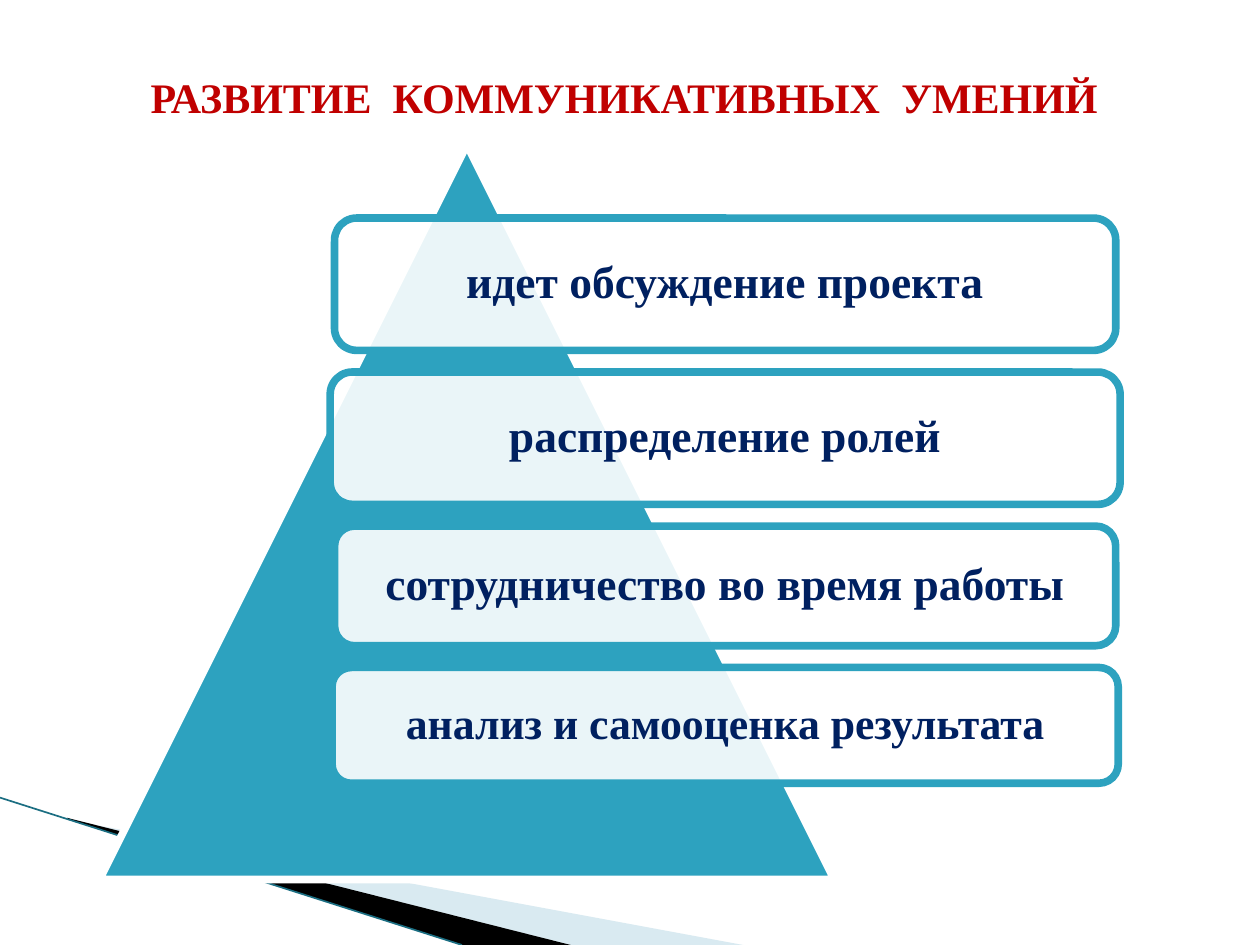
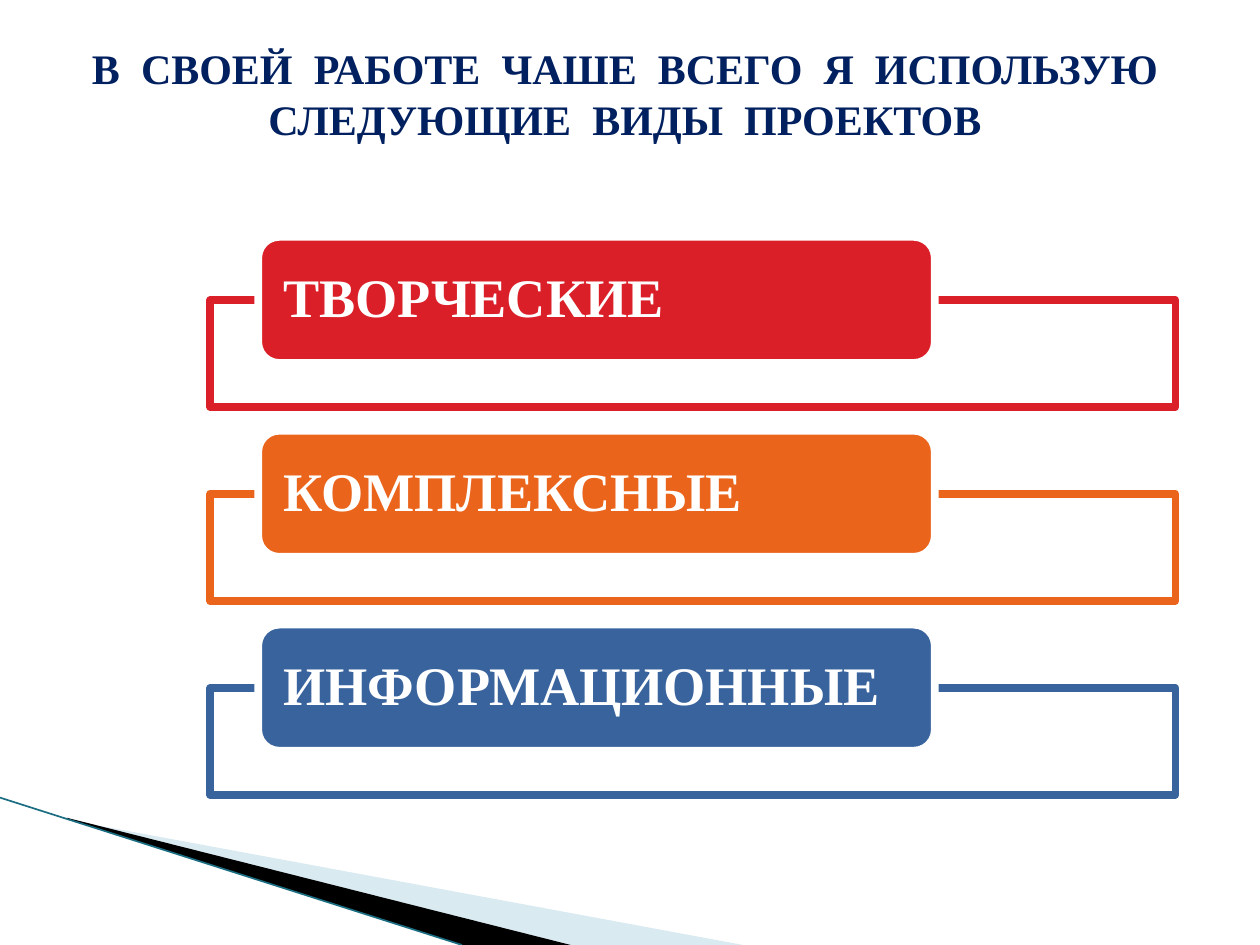
from dataclasses import dataclass

import pptx
import pptx.dml.color
import pptx.enum.shapes
import pptx.enum.text
import pptx.oxml
import pptx.oxml.ns
import pptx.util

Pt = pptx.util.Pt
RGB = pptx.dml.color.RGBColor
SHAPE = pptx.enum.shapes.MSO_SHAPE
ALIGN = pptx.enum.text.PP_ALIGN
ANCHOR = pptx.enum.text.MSO_ANCHOR

# Shared colours and formats
WHITE = RGB(0xFF, 0xFF, 0xFF)
BLACK = RGB(0x00, 0x00, 0x00)
NAVY = RGB(0x00, 0x20, 0x60)
CRIMSON = RGB(0xC0, 0x00, 0x00)
TEAL = RGB(0x2D, 0xA2, 0xBF)
DARK_TEAL = RGB(0x1B, 0x6E, 0x82)
PALE_BLUE = RGB(0xA0, 0xCB, 0xDC)
RED = RGB(0xDA, 0x1F, 0x28)
ORANGE = RGB(0xEB, 0x64, 0x1B)
BLUE = RGB(0x39, 0x63, 0x9D)

FONT = {"name": "Times New Roman", "bold": True}
BORDER = 4.33
TITLE_SIZE = 24
TITLE_WORD_GAP = 6  # extra points between title words


@dataclass
class Box:
    left: float
    top: float
    width: float
    height: float

    def lengths(self) -> list:
        return [Pt(v) for v in (self.left, self.top, self.width, self.height)]


@dataclass
class Wedge:
    points: list
    color: RGB
    opacity: int


@dataclass
class Skill:
    text: str
    width: float
    height: float
    size: int


@dataclass
class Project:
    text: str
    color: RGB


WEDGES = [
    Wedge([(39.6, 468.7), (424.6, 540), (326, 540), (39.6, 468)], PALE_BLUE, 40),
    Wedge([(38.2, 467.3), (326.2, 540), (264, 540), (38.9, 468)], BLACK, 100),
]
SKILLS = [
    Skill("идет обсуждение проекта", 446.4, 75.6, 26),
    Skill("распределение ролей", 451.4, 75.6, 26),
    Skill("сотрудничество во время работы", 446.4, 68.4, 26),
    Skill("анализ и самооценка результата", 449.3, 66.2, 25),
]
PROJECTS = [
    Project("ТВОРЧЕСКИЕ", RED),
    Project("КОМПЛЕКСНЫЕ", ORANGE),
    Project("ИНФОРМАЦИОННЫЕ", BLUE),
]


def apply(obj, values: dict) -> None:
    for name, value in values.items():
        setattr(obj, name, value)


def set_fill(sp, color: RGB, opacity: int = 100) -> None:
    sp.shadow.inherit = False
    sp.fill.solid()
    sp.fill.fore_color.rgb = color
    if opacity < 100:
        clr = sp._element.spPr.find(".//" + pptx.oxml.ns.qn("a:srgbClr"))
        alpha = pptx.oxml.parse_xml(
            f'<a:alpha {pptx.oxml.ns.nsdecls("a")} val="{opacity * 1000}"/>')
        clr.append(alpha)


def add_panel(s, kind, box: Box, fill: RGB, line: RGB, opacity: int = 100):
    sp = s.shapes.add_shape(kind, *box.lengths())
    set_fill(sp, fill, opacity)
    sp.line.color.rgb = line
    sp.line.width = Pt(BORDER)
    return sp


def set_font(r, size: float, color: RGB) -> None:
    apply(r.font, {**FONT, "size": Pt(size)})
    r.font.color.rgb = color


def set_label(sp, text: str, size: int, color: RGB, align, inset: float) -> None:
    tf = sp.text_frame
    apply(tf, {"word_wrap": True, "vertical_anchor": ANCHOR.MIDDLE,
               "margin_left": Pt(inset), "margin_right": Pt(inset),
               "margin_top": 0, "margin_bottom": 0})
    p = tf.paragraphs[0]
    apply(p, {"alignment": align, "line_spacing": 0.9})
    r = p.add_run()
    r.text = text
    set_font(r, size, color)


def add_title(s, text: str, box: Box, color: RGB) -> None:
    sp = s.shapes.title
    apply(sp, dict(zip(("left", "top", "width", "height"), box.lengths())))
    tf = sp.text_frame
    apply(tf, {"word_wrap": True, "vertical_anchor": ANCHOR.TOP,
               "auto_size": pptx.enum.text.MSO_AUTO_SIZE.NONE})
    p = tf.paragraphs[0]
    p.alignment = ALIGN.CENTER
    for i, word in enumerate(text.split()):
        for piece in ([" "] if i else []) + [word]:
            r = p.add_run()
            r.text = piece
            set_font(r, TITLE_SIZE, color)
            if piece == " ":
                r._r.get_or_add_rPr().set("spc", str(TITLE_WORD_GAP * 100))


def add_corner(s) -> None:
    # Wedges and thin line in the lower left corner
    for wedge in WEDGES:
        points = [(Pt(x), Pt(y)) for x, y in wedge.points]
        builder = s.shapes.build_freeform(*points[0])
        builder.add_line_segments(points[1:], close=True)
        sp = builder.convert_to_shape()
        set_fill(sp, wedge.color, wedge.opacity)
        sp.line.fill.background()
    line = s.shapes.add_connector(pptx.enum.shapes.MSO_CONNECTOR.STRAIGHT,
                                  Pt(0), Pt(455.8), Pt(264), Pt(540))
    line.line.color.rgb = DARK_TEAL
    line.line.width = Pt(0.95)
    line._element.spPr.append(pptx.oxml.parse_xml(
        f'<a:effectLst {pptx.oxml.ns.nsdecls("a")}/>'))


def new_slide(prs, title: str, box: Box, color: RGB):
    s = prs.slides.add_slide(prs.slide_layouts[5])
    add_corner(s)
    add_title(s, title, box, color)
    return s


def build_skills(prs) -> None:
    s = new_slide(prs, "РАЗВИТИЕ КОММУНИКАТИВНЫХ УМЕНИЙ",
                  Box(70.5, 37.4, 572.4, 36), CRIMSON)
    add_panel(s, SHAPE.ISOSCELES_TRIANGLE, Box(56.9, 82.8, 419.8, 419.8),
              TEAL, WHITE)
    # Centred stack with equal gaps
    center, top, gap = 414.4, 124.6, 12.4
    for skill in SKILLS:
        box = Box(center - skill.width / 2, top, skill.width, skill.height)
        sp = add_panel(s, SHAPE.ROUNDED_RECTANGLE, box, WHITE, TEAL, 90)
        set_label(sp, skill.text, skill.size, NAVY, ALIGN.CENTER, 8)
        top += skill.height + gap


def build_projects(prs) -> None:
    s = new_slide(prs, "В СВОЕЙ РАБОТЕ ЧАШЕ ВСЕГО Я ИСПОЛЬЗУЮ "
                  "СЛЕДУЮЩИЕ ВИДЫ ПРОЕКТОВ", Box(36.7, 20.9, 640.8, 65.5), NAVY)
    # Frame with a heading over its top edge, at an even step
    step, heading_height = 110.8, 72
    for i, project in enumerate(PROJECTS):
        top = 171.4 + i * step
        add_panel(s, SHAPE.RECTANGLE, Box(120.2, top, 551.5, 61.2),
                  WHITE, project.color, 90)
        heading = Box(147.6, top - heading_height / 2, 386.6, heading_height)
        sp = add_panel(s, SHAPE.ROUNDED_RECTANGLE, heading, project.color, WHITE)
        set_label(sp, project.text, 31, WHITE, ALIGN.LEFT, 10.9)


def main() -> None:
    prs = pptx.Presentation()
    prs.slide_width, prs.slide_height = Pt(720), Pt(540)
    build_skills(prs)
    build_projects(prs)
    prs.save("out.pptx")


if __name__ == "__main__":
    main()
